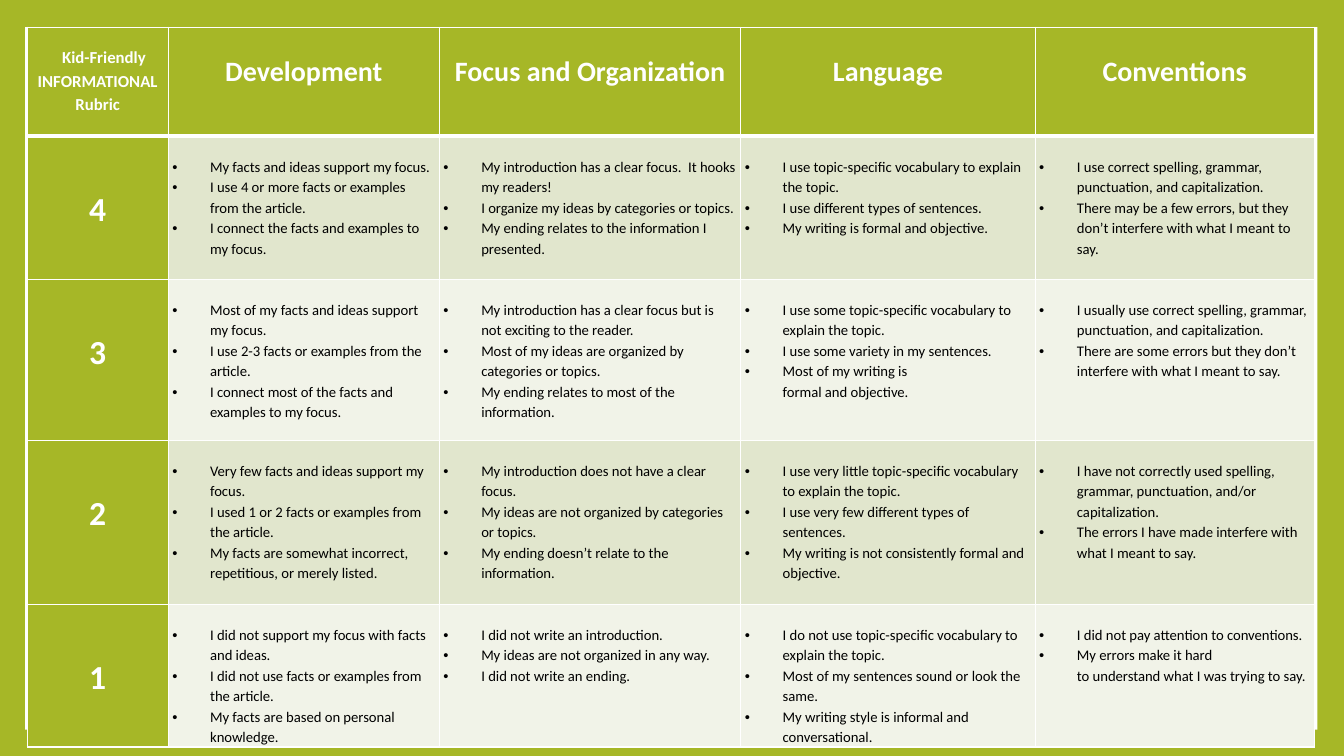
"""Build a one-slide kid-friendly rubric table for informational writing."""
import copy

import pptx
import pptx.dml.color
import pptx.enum.shapes
import pptx.enum.text
import pptx.oxml
import pptx.oxml.ns
import pptx.util
from lxml import etree

Pt = pptx.util.Pt
RGB = pptx.dml.color.RGBColor.from_string
qn = pptx.oxml.ns.qn
COLORS = {"green": "A6B727", "white": "FFFFFF", "black": "000000",
          "band": "E1E6CD", "light": "F1F3E8"}
COL_WIDTHS = [100.8, 193.7, 215.3, 210.2, 199.4]
ROW_HEIGHTS = [78, 102.1, 115, 117.1, 102.1]
HEADINGS = ["Development", "Focus and Organization", "Language", "Conventions"]
SCORES = {
    "4": [
        ["My facts and ideas support my focus.",
         "I use 4 or more facts or examples from the article.",
         "I connect the facts and examples to my focus."],
        ["My introduction has a clear focus.  It hooks my readers!",
         "I organize my ideas by categories or topics.",
         "My ending relates to the information I presented."],
        ["I use topic-specific vocabulary to explain the topic.",
         "I use different types of sentences.",
         "My writing is formal and objective."],
        ["I use correct spelling, grammar, punctuation, and capitalization.",
         "There may be a few errors, but they don’t interfere with what I meant to say."],
    ],
    "3": [
        ["Most of my facts and ideas support my focus.",
         "I use 2-3 facts or examples from the article.",
         "I connect most of the facts and examples to my focus."],
        ["My introduction has a clear focus but is not exciting to the reader.",
         "Most of my ideas are organized by categories or topics.",
         "My ending relates to most of the information."],
        ["I use some topic-specific vocabulary to explain the topic.",
         "I use some variety in my sentences.",
         "Most of my writing is\vformal and objective."],
        ["I usually use correct spelling, grammar, punctuation, and capitalization.",
         "There are some errors but they don’t interfere with what I meant to say."],
    ],
    "2": [
        ["Very few facts and ideas support my focus.",
         "I used 1 or 2 facts or examples from the article.",
         "My facts are somewhat incorrect, repetitious, or merely listed."],
        ["My introduction does not have a clear focus.",
         "My ideas are not organized by categories or topics.",
         "My ending doesn’t relate to the information."],
        ["I use very little topic-specific vocabulary to explain the topic.",
         "I use very few different types of sentences.",
         "My writing is not consistently formal and objective."],
        ["I have not correctly used spelling, grammar, punctuation, and/or capitalization.",
         "The errors I have made interfere with what I meant to say."],
    ],
    "1": [
        ["I did not support my focus with facts and ideas.",
         "I did not use facts or examples from the article.",
         "My facts are based on personal knowledge."],
        ["I did not write an introduction.",
         "My ideas are not organized in any way.",
         "I did not write an ending."],
        ["I do not use topic-specific vocabulary to explain the topic.",
         "Most of my sentences sound or look the same.",
         "My writing style is informal and conversational."],
        ["I did not pay attention to conventions.",
         "My errors make it hard\vto understand what I was trying to say."],
    ],
}


def write(cell, lines, size, top, fill, color="white", bold=True, bullets=False):
    cell.fill.solid()
    cell.fill.fore_color.rgb = RGB(COLORS[fill])
    cell.margin_left = cell.margin_right = Pt(2.9)
    cell.margin_top, cell.margin_bottom = Pt(top), 0
    tf = cell.text_frame
    for i, line in enumerate(lines):
        p = tf.add_paragraph() if i else tf.paragraphs[0]
        p.text = line
        p.line_spacing = 1.15
        p.alignment = pptx.enum.text.PP_ALIGN.LEFT if bullets else pptx.enum.text.PP_ALIGN.CENTER
        for r in p.runs:
            r.font.name, r.font.size, r.font.bold = "Calibri", Pt(size), bold
            r.font.color.rgb = RGB(COLORS[color])
        for br in p._p.findall(qn("a:br")):
            br.append(copy.deepcopy(p.runs[0]._r.rPr))
        if bullets:
            pPr = p._p.get_or_add_pPr()
            pPr.set("marL", str(Pt(27)))
            pPr.set("indent", str(Pt(-27)))
            etree.SubElement(pPr, qn("a:buFont")).set("typeface", "Arial")
            etree.SubElement(pPr, qn("a:buChar")).set("char", "•")


def add_borders(cell, **widths):
    tcPr = cell._tc.get_or_add_tcPr()
    for i, side in enumerate("LRTB"):
        ln = etree.Element(qn(f"a:ln{side}"), w=str(Pt(widths.get(side, 1))))
        fill = etree.SubElement(ln, qn("a:solidFill"))
        etree.SubElement(fill, qn("a:srgbClr")).set("val", COLORS["white"])
        tcPr.insert(i, ln)


prs = pptx.Presentation()
prs.slide_width, prs.slide_height = Pt(960), Pt(540)
s = prs.slides.add_slide(prs.slide_layouts[6])
s.background.fill.solid()
s.background.fill.fore_color.rgb = RGB(COLORS["green"])

panel = s.shapes.add_shape(pptx.enum.shapes.MSO_SHAPE.RECTANGLE,
                           Pt(18), Pt(19.4), Pt(923), Pt(501.8))
panel.shadow.inherit = False
panel.fill.solid()
panel.fill.fore_color.rgb = RGB(COLORS["white"])
panel.line.fill.background()

table = s.shapes.add_table(len(ROW_HEIGHTS), len(COL_WIDTHS), Pt(19.4), Pt(19.4),
                           Pt(sum(COL_WIDTHS)), Pt(sum(ROW_HEIGHTS))).table
table.horz_banding = False
for column, width in zip(table.columns, COL_WIDTHS):
    column.width = Pt(width)
for row, height in zip(table.rows, ROW_HEIGHTS):
    row.height = Pt(height)

corner = table.cell(0, 0)
write(corner, ["Kid-Friendly", "INFORMATIONAL", "Rubric"], 12, 12.5, "green")
corner.text_frame.paragraphs[0]._p.get_or_add_pPr().set("marL", str(Pt(9)))
for col, heading in enumerate(HEADINGS, 1):
    write(table.cell(0, col), [heading], 20, 16, "green")

for row, (score, criteria) in enumerate(SCORES.items(), 1):
    write(table.cell(row, 0), [score], 24, 33.7, "green")
    for col, lines in enumerate(criteria, 1):
        write(table.cell(row, col), lines, 10.5, 14, "band" if row % 2 else "light",
              color="black", bold=False, bullets=True)

for row in range(len(ROW_HEIGHTS)):
    for col in range(len(COL_WIDTHS)):
        add_borders(table.cell(row, col), T=3 if row == 1 else 1, B=3 if row == 0 else 1)

prs.save("out.pptx")
